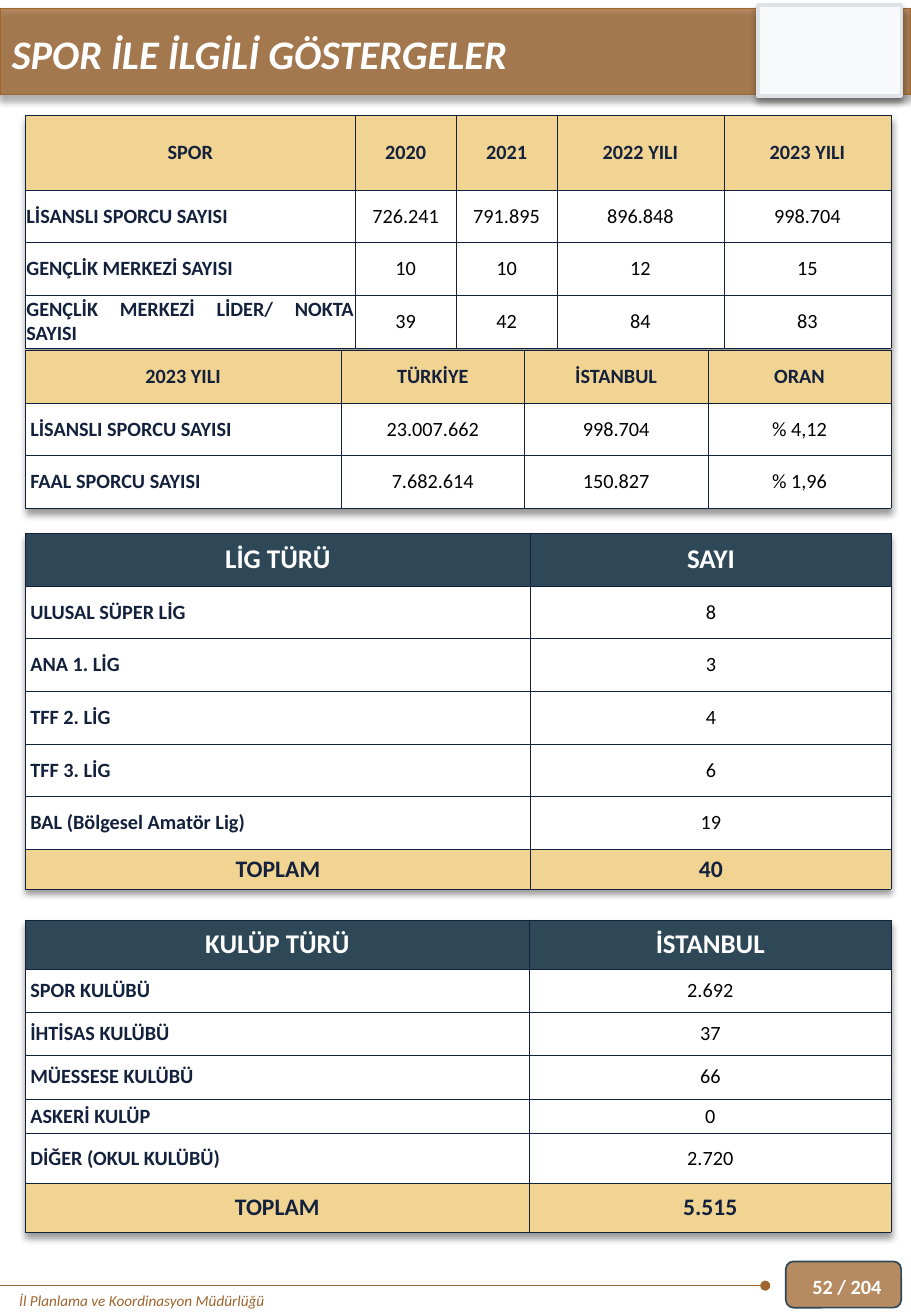
from dataclasses import dataclass

from lxml import etree
from pptx import Presentation
from pptx.dml.color import RGBColor
from pptx.enum.shapes import MSO_CONNECTOR, MSO_SHAPE
from pptx.enum.text import MSO_ANCHOR, PP_ALIGN
from pptx.oxml.ns import qn
from pptx.util import Pt

RECTANGLE, ROUNDED = MSO_SHAPE.RECTANGLE, MSO_SHAPE.ROUNDED_RECTANGLE
STRAIGHT = MSO_CONNECTOR.STRAIGHT
LEFT, CENTER, JUSTIFY = PP_ALIGN.LEFT, PP_ALIGN.CENTER, PP_ALIGN.JUSTIFY
TOP, MIDDLE = MSO_ANCHOR.TOP, MSO_ANCHOR.MIDDLE


@dataclass(frozen=True)
class Theme:
    font: str = "Calibri"
    brown: str = "9E652E"
    slate: str = "2F4858"
    navy: str = "14213D"
    sand: str = "F2D492"
    white: str = "FFFFFF"
    black: str = "000000"
    panel: str = "F8F9FA"
    panel_line: str = "DEE2E6"
    title: int = 24
    heading: int = 16
    total: int = 14
    body: int = 12
    footer: int = 9


def rgb(color):
    return RGBColor.from_string(color)


def add_color(parent, color, alpha=None):
    element = etree.SubElement(parent, qn("a:srgbClr"), val=color)
    if alpha:
        etree.SubElement(element, qn("a:alpha"), val=str(alpha * 1000))


class SlideBuilder:
    def __init__(self, slide, theme):
        self.slide = slide
        self.theme = theme

    def shadow(self, properties, position):
        effects = etree.Element(qn("a:effectLst"))
        outer = etree.SubElement(effects, qn("a:outerShdw"), blurRad=str(Pt(4)),
                                 dist=str(Pt(3)), dir="5400000", rotWithShape="0")
        add_color(outer, self.theme.black, 40)
        properties.insert(position, effects)

    def style(self, paragraph, size, color, bold=False, italic=False, align=LEFT):
        paragraph.alignment = align
        font = paragraph.font
        font.name, font.size = self.theme.font, Pt(size)
        font.bold, font.italic = bold, italic
        font.color.rgb = rgb(color)

    def box(self, kind, left, top, width, height, fill, line, line_width=1,
            opacity=None, shadow=False):
        shape = self.slide.shapes.add_shape(kind, Pt(left), Pt(top), Pt(width), Pt(height))
        shape.shadow.inherit = False
        shape.fill.solid()
        shape.fill.fore_color.rgb = rgb(fill)
        shape.line.color.rgb = rgb(line)
        shape.line.width = Pt(line_width)
        properties = shape.element.spPr
        if opacity:
            color = properties.find(qn("a:solidFill")).find(qn("a:srgbClr"))
            etree.SubElement(color, qn("a:alpha"), val=str(opacity * 1000))
        if shadow:
            empty = properties.find(qn("a:effectLst"))
            position = properties.index(empty)
            properties.remove(empty)
            self.shadow(properties, position)

    def text(self, left, top, width, height, words, size, color, anchor=TOP, **style):
        shape = self.slide.shapes.add_textbox(Pt(left), Pt(top), Pt(width), Pt(height))
        frame = shape.text_frame
        frame.word_wrap = True
        frame.vertical_anchor = anchor
        frame.text = words
        self.style(frame.paragraphs[0], size, color, **style)

    def dotted_end_line(self, start, end, y, color, width):
        line = self.slide.shapes.add_connector(STRAIGHT, Pt(start), Pt(y), Pt(end), Pt(y))
        line.line.color.rgb = rgb(color)
        line.line.width = Pt(width)
        properties = line.element.spPr
        etree.SubElement(properties.find(qn("a:ln")), qn("a:headEnd"), type="oval")
        etree.SubElement(properties, qn("a:effectLst"))

    def cell(self, cell, words, fill, size, color, bold, align, inset):
        cell.margin_left = cell.margin_right = Pt(inset)
        cell.margin_top = cell.margin_bottom = Pt(0)
        cell.vertical_anchor = MIDDLE
        cell.text = words
        self.style(cell.text_frame.paragraphs[0], size, color, bold, align=align)
        properties = cell._tc.get_or_add_tcPr()
        for side in ("a:lnL", "a:lnR", "a:lnT", "a:lnB"):
            border = etree.SubElement(properties, qn(side), w=str(Pt(0.25)))
            add_color(etree.SubElement(border, qn("a:solidFill")), self.theme.navy)
        cell.fill.solid()
        cell.fill.fore_color.rgb = rgb(fill)

    def table(self, top, columns, heights, rows, dark_header=False, total=False,
              label_align=LEFT, inset=3):
        theme = self.theme
        frame = self.slide.shapes.add_table(len(rows), len(columns), Pt(15), Pt(top),
                                            Pt(sum(columns)), Pt(sum(heights)))
        table = frame.table
        table.horz_banding = False
        self.shadow(table._tbl.tblPr, 0)
        for column, width in zip(table.columns, columns):
            column.width = Pt(width)
        for row, height in zip(table.rows, heights):
            row.height = Pt(height)
        if dark_header:
            header = (theme.slate, theme.heading, theme.white, True, CENTER)
        else:
            header = (theme.sand, theme.body, theme.navy, True, CENTER)
        label = (theme.white, theme.body, theme.navy, True, label_align)
        value = (theme.white, theme.body, theme.black, False, CENTER)
        sum_row = (theme.sand, theme.total, theme.navy, True, CENTER)
        for i, row in enumerate(rows):
            for j, words in enumerate(row):
                if i == 0:
                    look = header
                elif total and i == len(rows) - 1:
                    look = sum_row
                else:
                    look = value if j else label
                self.cell(table.cell(i, j), words, *look, inset)


def main():
    theme = Theme()
    presentation = Presentation()
    presentation.slide_width, presentation.slide_height = Pt(540), Pt(779.76)
    slide = presentation.slides.add_slide(presentation.slide_layouts[6])
    builder = SlideBuilder(slide, theme)

    # Page frame: number badge, title band, emblem panel, footer
    builder.box(ROUNDED, 465.8, 747.4, 68.4, 27.4, theme.brown, theme.slate, opacity=75)
    builder.box(RECTANGLE, 0, 5, 540, 51.1, theme.brown, theme.brown, opacity=75, shadow=True)
    builder.box(RECTANGLE, 449.3, 2.9, 85, 54, theme.panel, theme.panel_line, 2, shadow=True)
    builder.dotted_end_line(453.6, 0, 761.8, theme.brown, 0.5)
    builder.text(4.3, 761.8, 337.7, 18, "İl Planlama ve Koordinasyon Müdürlüğü",
                 theme.footer, theme.brown, italic=True)
    builder.text(0, 13.7, 540, 36, "SPOR İLE İLGİLİ GÖSTERGELER",
                 theme.title, theme.white, bold=True, italic=True)

    # Sport indicators by year
    builder.table(68.4, [195.6, 59.8, 59.8, 99, 99], [44.2] + [31.2] * 3, [
        ("SPOR", "2020", "2021", "2022 YILI", "2023 YILI"),
        ("LİSANSLI SPORCU SAYISI", "726.241", "791.895", "896.848", "998.704"),
        ("GENÇLİK MERKEZİ SAYISI", "10", "10", "12", "15"),
        ("GENÇLİK MERKEZİ LİDER/ NOKTA SAYISI", "39", "42", "84", "83"),
    ], label_align=JUSTIFY, inset=0.7)

    # Country and city comparison
    builder.table(207.6, [187.2] + [108.7] * 3, [31.2] * 3, [
        ("2023 YILI", "TÜRKİYE", "İSTANBUL", "ORAN"),
        ("LİSANSLI SPORCU SAYISI", "23.007.662", "998.704", "% 4,12"),
        ("FAAL SPORCU SAYISI", "7.682.614", "150.827", "% 1,96"),
    ])

    # Teams by league
    builder.table(316, [299.5, 213.8], [31.2] * 6 + [23.6], [
        ("LİG TÜRÜ", "SAYI"),
        ("ULUSAL SÜPER LİG", "8"),
        ("ANA 1. LİG", "3"),
        ("TFF 2. LİG", "4"),
        ("TFF 3. LİG", "6"),
        ("BAL (Bölgesel Amatör Lig)", "19"),
        ("TOPLAM", "40"),
    ], dark_header=True, total=True)

    # Clubs by type
    builder.table(545.2, [298.8, 214.5], [29, 25.5, 25.5, 26, 20.5, 29.5, 29], [
        ("KULÜP TÜRÜ", "İSTANBUL"),
        ("SPOR KULÜBÜ", "2.692"),
        ("İHTİSAS KULÜBÜ", "37"),
        ("MÜESSESE KULÜBÜ", "66"),
        ("ASKERİ KULÜP", "0"),
        ("DİĞER (OKUL KULÜBÜ)", "2.720"),
        ("TOPLAM", "5.515"),
    ], dark_header=True, total=True)

    # Page number
    builder.text(474.5, 747.4, 65, 30.2, "52 / 204", theme.body, theme.white,
                 anchor=MIDDLE, bold=True)

    presentation.save("out.pptx")


if __name__ == "__main__":
    main()
